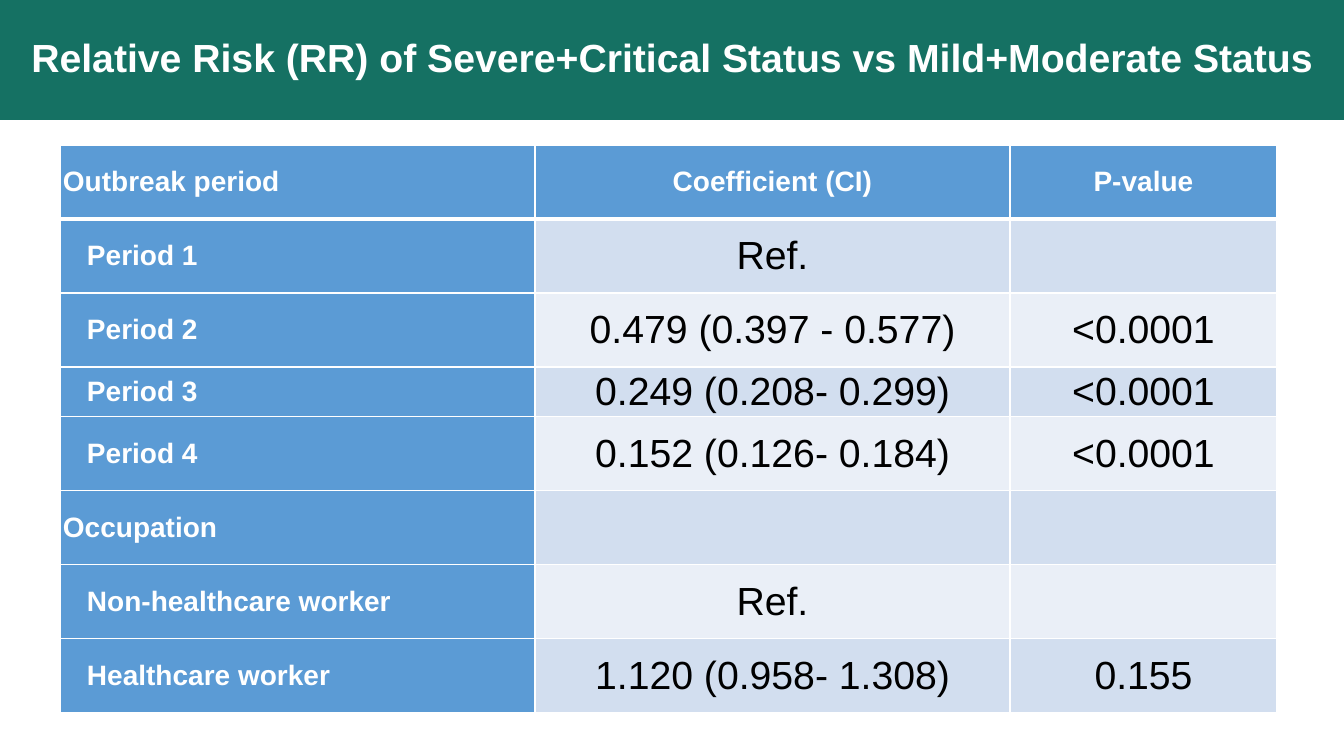
import lxml.etree
import pptx
import pptx.dml.color
import pptx.enum.text
import pptx.oxml.ns
import pptx.util

RGBColor = pptx.dml.color.RGBColor
ALIGN = pptx.enum.text.PP_ALIGN
MIDDLE = pptx.enum.text.MSO_ANCHOR.MIDDLE

WHITE = RGBColor(0xFF, 0xFF, 0xFF)
BLACK = RGBColor(0x00, 0x00, 0x00)
GREEN = RGBColor(0x15, 0x71, 0x63)
BLUE = RGBColor(0x5B, 0x9B, 0xD5)
BANDS = (RGBColor(0xEA, 0xEF, 0xF7), RGBColor(0xD2, 0xDE, 0xEF))

PX_PER_INCH = 100.8
WIDTH, HEIGHT = 1344, 756
MARGIN, INDENT = 3, 24
COLUMNS = (475, 475, 267)
ROW, SHORT_ROW = 74, 50

# Label, indented or not, coefficient, p-value
ROWS = (
    ("Outbreak period", False, "Coefficient (CI)", "P-value"),
    ("Period 1", True, "Ref.", ""),
    ("Period 2", True, "0.479 (0.397 - 0.577)", "<0.0001"),
    ("Period 3", True, "0.249 (0.208- 0.299)", "<0.0001"),
    ("Period 4", True, "0.152 (0.126- 0.184)", "<0.0001"),
    ("Occupation", False, "", ""),
    ("Non-healthcare worker", True, "Ref.", ""),
    ("Healthcare worker", True, "1.120 (0.958- 1.308)", "0.155"),
)


def px(length):
    return pptx.util.Emu(round(length * 914400 / PX_PER_INCH))


class SlideBuilder:
    def __init__(self, page, font):
        self.page = page
        self.font = font

    def set_text(self, frame, text, size, color, bold, align):
        para = frame.paragraphs[0]
        para.text = text
        para.alignment = align
        para.font.name = self.font
        para.font.size = pptx.util.Pt(size)
        para.font.bold = bold
        para.font.color.rgb = color
        return para

    def title(self, text, height):
        box = self.page.shapes.title
        box.left, box.top, box.width, box.height = 0, 0, px(WIDTH), px(height)
        box.fill.solid()
        box.fill.fore_color.rgb = GREEN
        frame = box.text_frame
        frame.auto_size = pptx.enum.text.MSO_AUTO_SIZE.NONE
        frame.vertical_anchor = MIDDLE
        para = self.set_text(frame, text, 28, WHITE, True, ALIGN.CENTER)
        para.line_spacing = 0.9

    def border(self, cell, side, points):
        properties = cell._tc.get_or_add_tcPr()
        qn = pptx.oxml.ns.qn
        line = lxml.etree.SubElement(properties, qn(f"a:ln{side}"), w=str(pptx.util.Pt(points)))
        fill = lxml.etree.SubElement(line, qn("a:solidFill"))
        lxml.etree.SubElement(fill, qn("a:srgbClr"), val=str(WHITE))

    def cell(self, cell, text, row, column, indented):
        heading = row == 0 or column == 0
        # Borders, heavier under the header row
        for side in "LRTB":
            under_header = (row, side) in ((0, "B"), (1, "T"))
            self.border(cell, side, 3 if under_header else 1)
        cell.fill.solid()
        cell.fill.fore_color.rgb = BLUE if heading else BANDS[row % 2]
        cell.margin_left = px(MARGIN + INDENT if indented else MARGIN)
        cell.margin_right = cell.margin_top = cell.margin_bottom = px(MARGIN)
        cell.vertical_anchor = MIDDLE
        if text:
            self.set_text(cell.text_frame, text, 20 if heading else 28,
                          WHITE if heading else BLACK, heading,
                          ALIGN.CENTER if column else ALIGN.LEFT)

    def table(self, left, top, rows, widths, heights):
        table = self.page.shapes.add_table(
            len(rows), len(widths), px(left), px(top),
            px(sum(widths)), px(sum(heights))).table
        for column, width in zip(table.columns, widths):
            column.width = px(width)
        for line, height in zip(table.rows, heights):
            line.height = px(height)
        for row, (label, indented, *values) in enumerate(rows):
            for column, text in enumerate((label, *values)):
                self.cell(table.cell(row, column), text, row, column,
                          indented and column == 0)


def main():
    deck = pptx.Presentation()
    deck.slide_width, deck.slide_height = px(WIDTH), px(HEIGHT)
    page = deck.slides.add_slide(deck.slide_layouts[5])
    builder = SlideBuilder(page, "Arial")

    # Title band
    builder.title("Relative Risk (RR) of Severe+Critical Status vs Mild+Moderate Status", 120)

    # Results table
    heights = [SHORT_ROW if row[0] == "Period 3" else ROW for row in ROWS]
    builder.table(60, 145, ROWS, COLUMNS, heights)

    deck.save("out.pptx")


if __name__ == "__main__":
    main()
